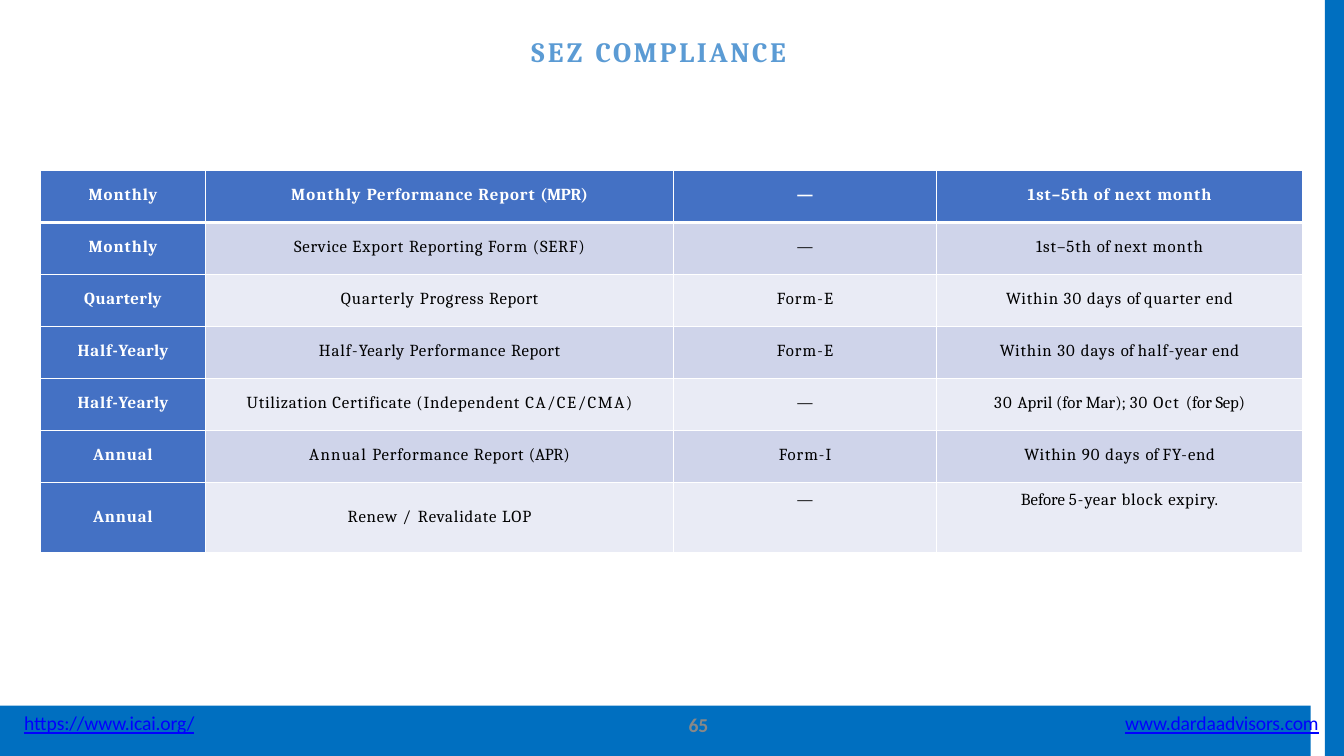
from lxml import etree
from pptx import Presentation
from pptx import util as u
from pptx.dml.color import RGBColor
from pptx.enum import shapes, text
from pptx.oxml.ns import qn

HUES = {"frame": "006FC0", "head": "4471C4", "dark": "CFD4EA", "light": "E9EBF5",
        "white": "FFFFFF", "black": "000000", "link": "0000FF", "page": "888888",
        "title": "5B9BD4"}


def write(frame, runs, size=12, font="Cambria", hue="black", bold=False,
          line=False, align=None, lead=None):
    para = frame.paragraphs[0]
    para.alignment = align
    if lead:
        para.line_spacing = u.Pt(lead)
    for words, gap in runs:
        run = para.add_run()
        run.text = words
        run.font.size = u.Pt(size)
        run.font.name = font
        run.font.bold = bold
        run.font.underline = line
        run.font.color.rgb = RGBColor.from_string(HUES[hue])
        run.font._element.set("spc", str(round(gap * 100)))


def edge(cell, side, width):
    line = etree.SubElement(cell._tc.get_or_add_tcPr(), qn("a:" + side), w=str(u.Pt(width)))
    fill = etree.SubElement(line, qn("a:solidFill"))
    etree.SubElement(fill, qn("a:srgbClr"), val=HUES["white"])


deck = Presentation()
deck.slide_width, deck.slide_height = u.Inches(13.33), u.Inches(7.5)
slide = deck.slides.add_slide(deck.slide_layouts[6])

right = slide.shapes.add_shape(shapes.MSO_SHAPE.RECTANGLE, u.Inches(13.14), 0,
                               u.Inches(0.19), u.Inches(7.5))
pen = slide.shapes.build_freeform(0, 0, scale=u.Inches(1))
pen.add_line_segments([(0, 7.5), (13.24, 7.5), (13.24, 7.3), (0.19, 7.3),
                       (0.19, 0.16), (13.31, 0.16), (13.31, 0)], close=True)
for part in (right, pen.convert_to_shape()):
    part.shadow.inherit = False
    part.fill.solid()
    part.fill.fore_color.rgb = RGBColor.from_string(HUES["frame"])
    part.line.fill.background()

dash = [("—", -0.5)]
half = [("Half-", 0.6), ("Yearly", 0.4)]
year = [("Annual", 0.6)]
month = [("Monthly", 0.7)]
form = [("Form-", 0.8), ("E", 1.2)]
rows = [
    [month,
     [("Monthly ", 0.8), ("Performance ", 0.6), ("Report ", 0.7), ("(MPR)", -0.2)],
     dash,
     [("1st–5th ", 0.7), ("of ", 0.6), ("next ", 0.8), ("month", 0.7)]],
    [month,
     [("Service ", 0.5), ("Export ", 0.7), ("Reporting ", 0.5), ("Form ", 0.7), ("(SERF)", 0.5)],
     dash,
     [("1st–5th ", 0.7), ("of ", 0), ("next ", 0.7), ("month", 0.8)]],
    [[("Quarterly", 0.4)],
     [("Quarterly ", 0.7), ("Progress ", 0.6), ("Report", 0.4)],
     form,
     [("Within ", 0.6), ("30 days ", 0.8), ("of ", 0), ("quarter ", 0.6), ("end", 0.5)]],
    [half,
     [("Half-", 0.7), ("Yearly ", 0.5), ("Performance ", 0.6), ("Report", 0.4)],
     form,
     [("Within ", 0.6), ("30 days ", 0.8), ("of ", 0), ("half-", 0.7), ("year end", 0.5)]],
    [half,
     [("Utilization ", 0.5), ("Certificate (Independent ", 0.6), ("CA/CE/CMA)", 1.1)],
     dash,
     [("30 ", 0.8), ("April (for Mar); ", 0), ("30 ", 0.8), ("Oct ", 1.1), ("(for ", 0),
      ("Sep)", -0.2)]],
    [year,
     [("Annual ", 0.9), ("Performance ", 0.6), ("Report ", 0.5), ("(APR)", -0.2)],
     [("Form-", 0.7), ("I", -0.5)],
     [("Within ", 0.6), ("90 days ", 0.8), ("of ", 0), ("FY-", 0.8), ("end", 0.5)]],
    [year,
     [("Renew ", 0.6), ("/ ", 1.2), ("Revalidate ", 0.6), ("LOP", 0.7)],
     dash,
     [("Before ", 0), ("5-", 0.8), ("year ", 0.5), ("block ", 0.7), ("expiry.", 0.5)]],
]
wides = [1.64, 4.64, 2.61, 3.63]
last = len(rows) - 1
grid = slide.shapes.add_table(len(rows), len(wides), u.Inches(0.4), u.Inches(1.69),
                              u.Inches(sum(wides)), u.Inches(3.79)).table
for col, wide in zip(grid.columns, wides):
    col.width = u.Inches(wide)
for r, row in enumerate(rows):
    grid.rows[r].height = u.Inches(0.69 if r == last else 3.1 / last)
    for c, runs in enumerate(row):
        cell = grid.cell(r, c)
        head = r == 0 or c == 0
        cell.margin_left = cell.margin_right = cell.margin_bottom = 0
        cell.margin_top = u.Inches(0.15 if r < last else 0.24 if c < 2 else 0.08)
        for side in ("lnL", "lnR", "lnT", "lnB"):
            thick = (r, side) in ((0, "lnB"), (1, "lnT"))
            edge(cell, side, 3 if thick else 1)
        cell.fill.solid()
        tone = "head" if head else "dark" if r % 2 else "light"
        cell.fill.fore_color.rgb = RGBColor.from_string(HUES[tone])
        write(cell.text_frame, runs, hue="white" if head else "black", bold=head,
              align=text.PP_ALIGN.CENTER)

foot = dict(size=14, font="Calibri", lead=14.3)
link = dict(foot, hue="link", line=True)
for x, y, w, h, runs, look in [
    (0.24, 7.09, 1.74, 0.22, [("https://www.icai.org/", -0.1)], link),
    (11.16, 7.09, 1.97, 0.22, [("www.dardaadvisors.com", -0.1)], link),
    (6.83, 7.11, 0.26, 0.24, [("65", -0.2)], dict(foot, hue="page", bold=True)),
    (5.27, 0.34, 6.14, 0.67, [("SEZ ", 2.4), ("COMPLIANCE", 1.8)],
     dict(size=20, hue="title", bold=True)),
]:
    frame = slide.shapes.add_textbox(*map(u.Inches, (x, y, w, h))).text_frame
    frame.margin_left = frame.margin_right = frame.margin_top = frame.margin_bottom = 0
    frame.word_wrap = True
    write(frame, runs, **look)

deck.save("out.pptx")
